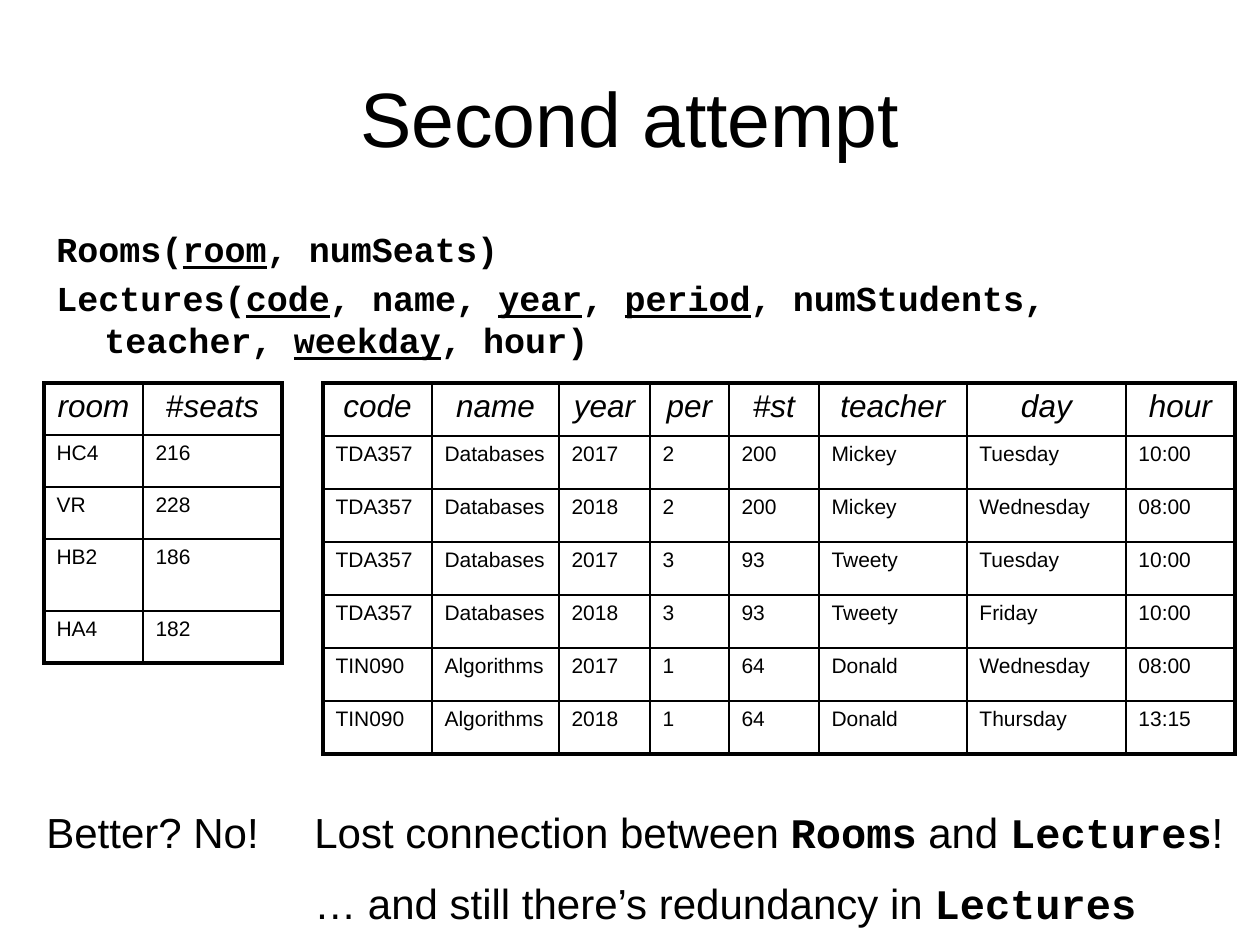
from lxml.etree import SubElement
from pptx import Presentation
from pptx.dml.color import RGBColor
from pptx.enum.text import MSO_ANCHOR, PP_ALIGN
from pptx.oxml.ns import qn
from pptx.util import Emu, Pt

SCALE = 914400 / 126
BLACK = RGBColor(0, 0, 0)
SANS, MONO = "Arial", "Courier New"
THIN, THICK = Pt(1), Pt(2.25)

ROOMS = [
    ["room", "|#|seats"],
    ["HC4", "216"],
    ["VR", "228"],
    ["HB2", "186"],
    ["HA4", "182"],
]
LECTURES = [
    ["code", "name", "year", "per", "#st", "teacher", "day", "hour"],
    ["TDA357", "Databases", "2017", "2", "200", "Mickey", "Tuesday", "10:00"],
    ["TDA357", "Databases", "2018", "2", "200", "Mickey", "Wednesday", "08:00"],
    ["TDA357", "Databases", "2017", "3", "93", "Tweety", "Tuesday", "10:00"],
    ["TDA357", "Databases", "2018", "3", "93", "Tweety", "Friday", "10:00"],
    ["TIN090", "Algorithms", "2017", "1", "64", "Donald", "Wednesday", "08:00"],
    ["TIN090", "Algorithms", "2018", "1", "64", "Donald", "Thursday", "13:15"],
]
SCHEMAS = [
    "Rooms(|room|, numSeats)",
    "Lectures(|code|, name, |year|, |period|, numStudents, teacher, |weekday|, hour)",
]
FINDINGS = [
    "Lost connection between |Rooms| and |Lectures|!",
    "… and still there’s redundancy in |Lectures|",
]


def px(n):
    return Emu(round(n * SCALE))


def write(p, text, base, marked=None, gap=0.2, align=PP_ALIGN.LEFT):
    """Fill a paragraph; pieces between bars also get the marked format."""
    p.alignment = align
    p.space_before = Pt(base["size"].pt * gap)
    for i, piece in enumerate(text.split("|")):
        if not piece:
            continue
        r = p.add_run()
        r.text = piece
        r.font.color.rgb = BLACK
        for name, value in {**base, **((marked or {}) if i % 2 else {})}.items():
            setattr(r.font, name, value)


def text_box(s, box, lines, base, hanging=0, anchor=MSO_ANCHOR.TOP, **style):
    tf = s.shapes.add_textbox(*map(px, box)).text_frame
    tf.word_wrap = True
    tf.vertical_anchor = anchor
    for i, line in enumerate(lines):
        p = tf.add_paragraph() if i else tf.paragraphs[0]
        write(p, line, base, **style)
        if hanging:
            pPr = p._p.get_or_add_pPr()
            pPr.set("marL", str(px(hanging)))
            pPr.set("indent", str(-px(hanging)))


def set_borders(cell, widths):
    tcPr = cell._tc.get_or_add_tcPr()
    for side, width in zip("LRTB", widths):
        ln = SubElement(tcPr, qn(f"a:ln{side}"), w=str(width))
        fill = SubElement(ln, qn("a:solidFill"))
        SubElement(fill, qn("a:srgbClr"), val=str(BLACK))


def data_table(s, left, top, rows, col_widths, row_heights):
    """Table with a thick frame, thin inner lines and an italic header row."""
    n_rows, n_cols = len(rows), len(col_widths)
    box = left, top, sum(col_widths), sum(row_heights)
    table = s.shapes.add_table(n_rows, n_cols, *map(px, box)).table
    table.first_row = table.horz_banding = False
    for col, width in zip(table.columns, col_widths):
        col.width = px(width)
    for row, height in zip(table.rows, row_heights):
        row.height = px(height)
    for i, row in enumerate(rows):
        for j, text in enumerate(row):
            cell = table.cell(i, j)
            p = cell.text_frame.paragraphs[0]
            if i == 0:
                write(p, text, {"name": SANS, "size": Pt(18), "italic": True},
                      {"italic": False}, align=PP_ALIGN.CENTER)
            else:
                write(p, text, {"name": SANS, "size": Pt(12)})
            outer = j == 0, j == n_cols - 1, i == 0, i == n_rows - 1
            set_borders(cell, [THICK if edge else THIN for edge in outer])
            cell.fill.background()


def attempt_slide(prs):
    s = prs.slides.add_slide(prs.slide_layouts[6])
    text_box(s, (63, 38, 1134, 158), ["Second attempt"],
             {"name": SANS, "size": Pt(44)}, anchor=MSO_ANCHOR.MIDDLE,
             gap=0, align=PP_ALIGN.CENTER)
    text_box(s, (44, 221, 1153, 163), SCHEMAS,
             {"name": MONO, "size": Pt(20), "bold": True},
             hanging=48, marked={"underline": True})
    data_table(s, 323, 383, LECTURES, [109, 127, 91, 79, 90, 148, 159, 109], [53] * 7)
    data_table(s, 44, 383, ROOMS, [99, 139], [52, 52, 52, 72, 52])
    note = {"name": SANS, "size": Pt(24)}
    text_box(s, (302, 800, 958, 139), FINDINGS, note,
             marked={"name": MONO, "bold": True}, gap=0.5)
    text_box(s, (34, 800, 258, 63), ["Better? No!"], note)


def main():
    prs = Presentation()
    prs.slide_width, prs.slide_height = px(1260), px(945)
    attempt_slide(prs)
    prs.save("out.pptx")


if __name__ == "__main__":
    main()
